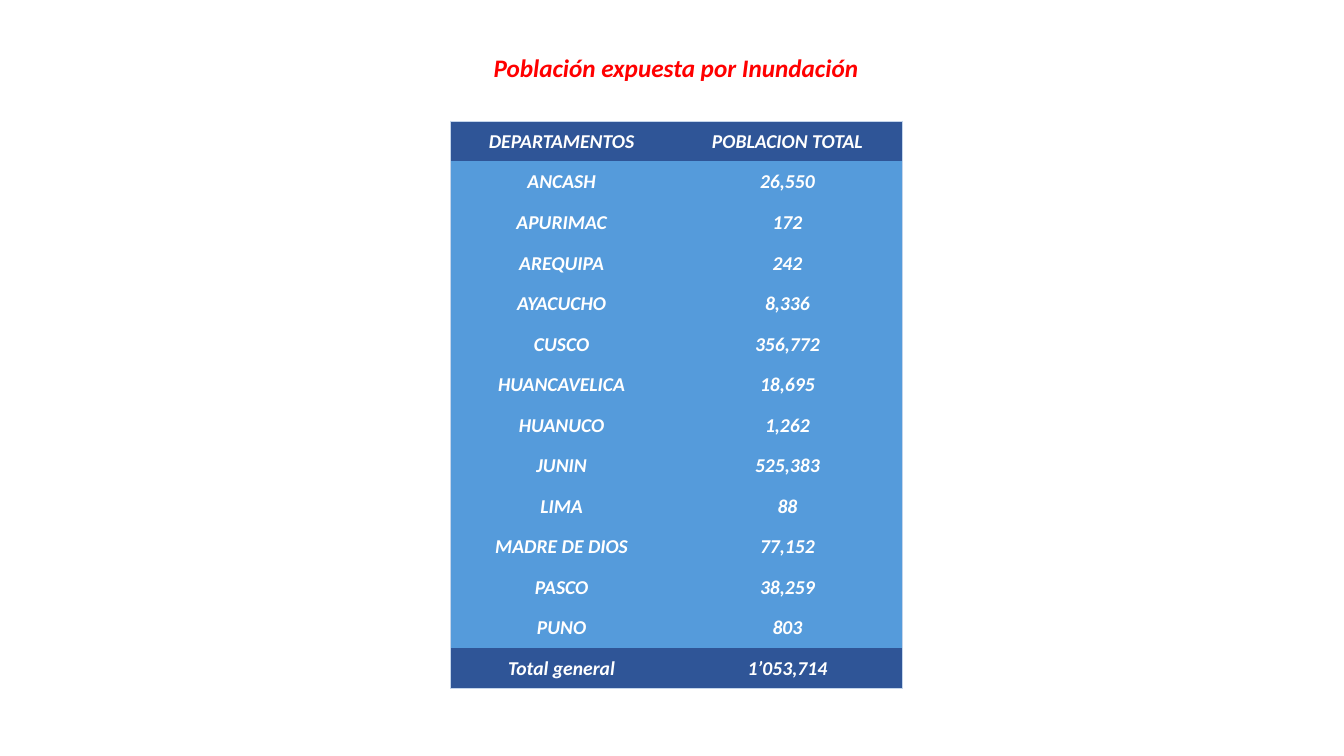
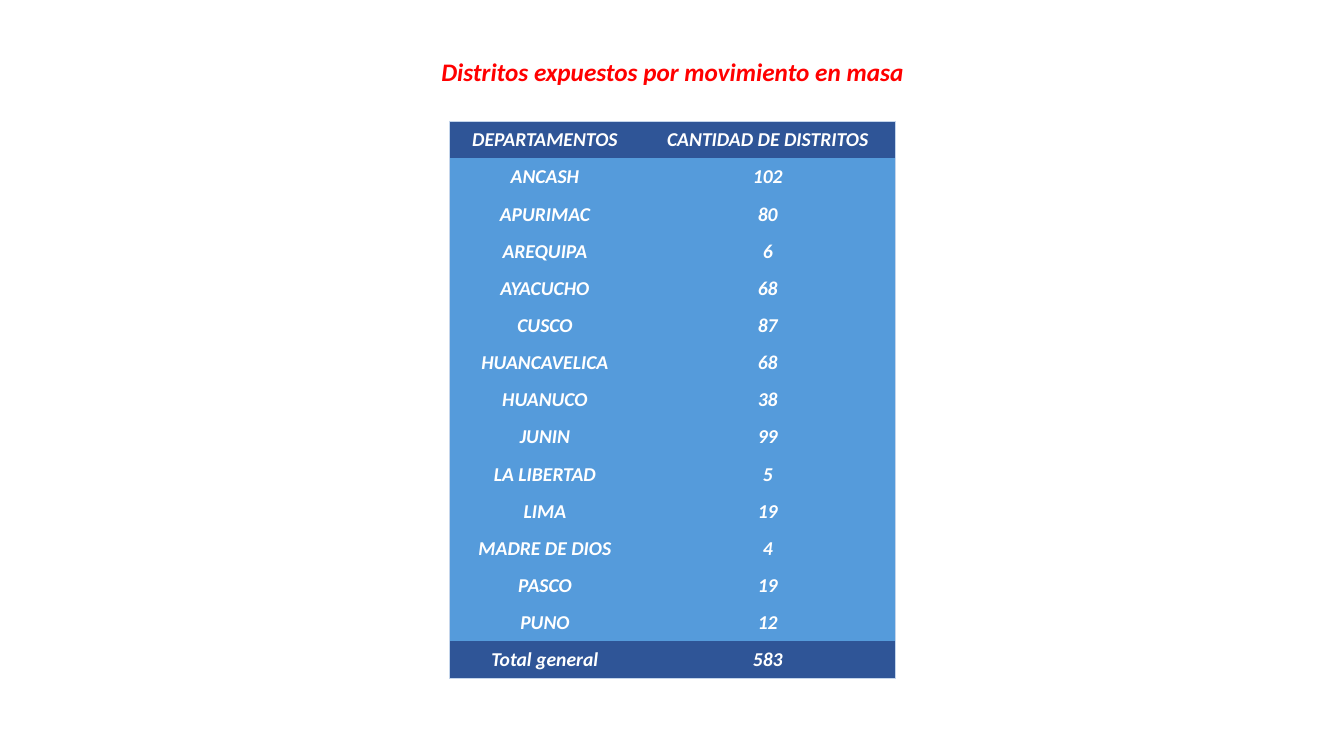
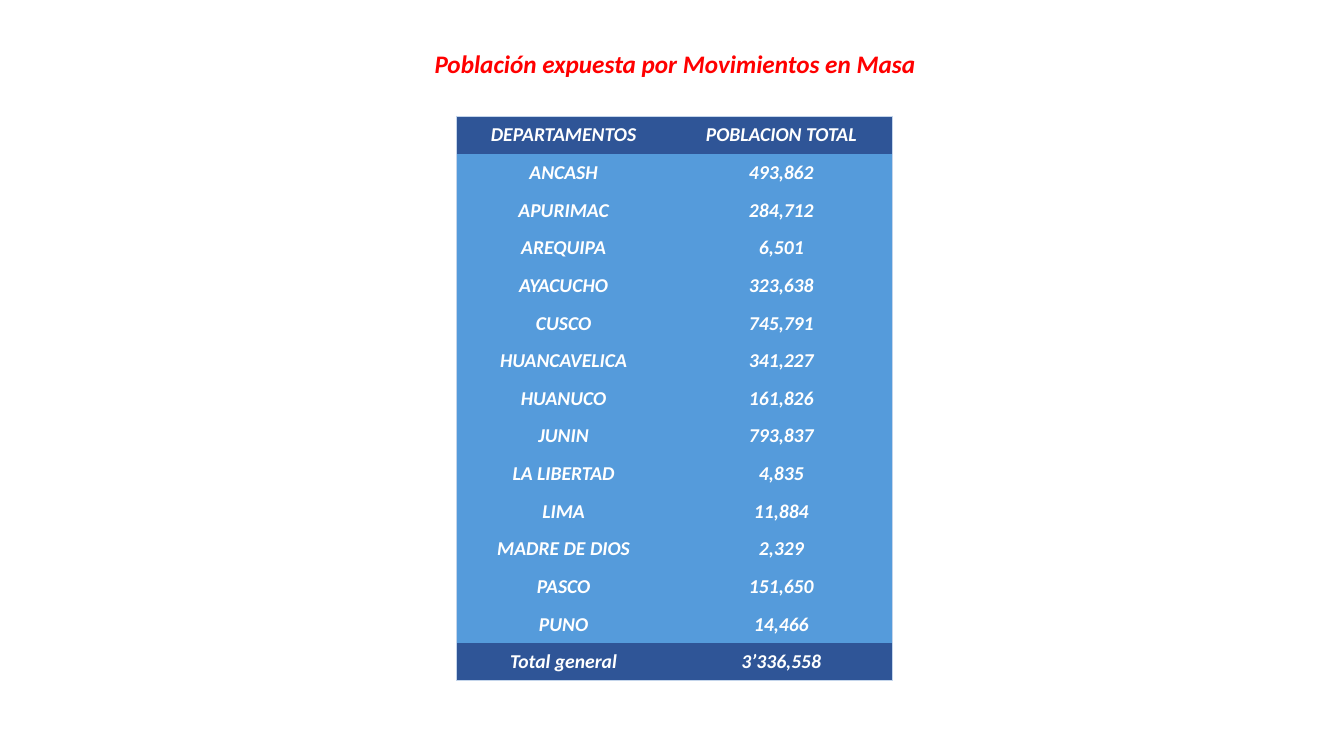
"""Tables of people and districts exposed to natural hazards."""
from dataclasses import dataclass

from lxml import etree
from pptx import Presentation
from pptx.dml.color import RGBColor
from pptx.enum.text import MSO_ANCHOR, MSO_AUTO_SIZE, PP_ALIGN
from pptx.oxml.ns import qn
from pptx.util import Inches, Pt

CENTER = PP_ALIGN.CENTER
TOP = MSO_ANCHOR.TOP
MIDDLE = MSO_ANCHOR.MIDDLE
GROW = MSO_AUTO_SIZE.SHAPE_TO_FIT_TEXT
TITLE_ONLY = 5


@dataclass(frozen=True)
class Theme:
    """Colours and type sizes shared by all slides."""

    font: str = "Calibri"
    title: str = "FF0000"
    text: str = "FFFFFF"
    band: str = "2F5597"
    body: str = "559BDB"
    edge: str = "C4D5EB"
    big: float = 18
    small: float = 14
    line: float = 0.5


@dataclass(frozen=True)
class Page:
    """One slide: a title above a table of departments."""

    title: str
    head: str
    names: list[str]
    counts: list[str]
    total: str
    box: tuple[float, float, float, float]
    left: float
    top: float
    cols: tuple[float, float]
    height: float

    def rows(self) -> list[tuple[str, str]]:
        """Return header, body and total rows."""
        body = list(zip(self.names, self.counts, strict=True))
        return [("DEPARTAMENTOS", self.head), *body, ("Total general", self.total)]


THEME = Theme()
PLACES = [
    "ANCASH", "APURIMAC", "AREQUIPA", "AYACUCHO", "CUSCO", "HUANCAVELICA", "HUANUCO",
    "JUNIN", "LA LIBERTAD", "LIMA", "MADRE DE DIOS", "PASCO", "PUNO",
]
PAGES = [
    Page(
        "Población expuesta por Inundación", "POBLACION TOTAL",
        [name for name in PLACES if name != "LA LIBERTAD"],
        ["26,550", "172", "242", "8,336", "356,772", "18,695", "1,262",
         "525,383", "88", "77,152", "38,259", "803"],
        "1’053,714", (4.78, 0.47, 3.85, 0.4), 4.47, 1.2, (2.2, 2.28), 5.63,
    ),
    Page(
        "Distritos expuestos por movimiento en masa", "CANTIDAD DE DISTRITOS",
        PLACES,
        ["102", "80", "6", "68", "87", "68", "38", "99", "5", "19", "4", "19", "12"],
        "583", (4.25, 0.51, 4.84, 0.4), 4.46, 1.2, (1.89, 2.53), 5.53,
    ),
    Page(
        "Población expuesta por Movimientos en Masa", "POBLACION TOTAL",
        PLACES,
        ["493,862", "284,712", "6,501", "323,638", "745,791", "341,227", "161,826",
         "793,837", "4,835", "11,884", "2,329", "151,650", "14,466"],
        "3’336,558", (4.18, 0.43, 5.03, 0.4), 4.53, 1.15, (2.12, 2.2), 5.6,
    ),
]


def write(frame, text: str, *, size: float, color: str) -> None:
    """Put centred bold italic text in a frame."""
    para = frame.paragraphs[0]
    para.alignment = CENTER
    run = para.add_run()
    run.text = text
    font = run.font
    font.name, font.size = THEME.font, Pt(size)
    font.bold = font.italic = True
    font.color.rgb = RGBColor.from_string(color)


def border(cell, sides: dict[str, bool]) -> None:
    """Draw the chosen sides of a cell and clear the others."""
    props = cell._tc.get_or_add_tcPr()
    for side, shown in sides.items():
        line = etree.SubElement(props, qn(f"a:ln{side}"), w=str(Pt(THEME.line)))
        if shown:
            fill = etree.SubElement(line, qn("a:solidFill"))
            etree.SubElement(fill, qn("a:srgbClr"), val=THEME.edge)
        else:
            etree.SubElement(line, qn("a:noFill"))


def add_title(slide, page: Page) -> None:
    """Place and fill the title."""
    shape = slide.shapes.title
    shape.left, shape.top, shape.width, shape.height = map(Inches, page.box)
    frame = shape.text_frame
    frame.word_wrap = False
    frame.auto_size = GROW
    frame.vertical_anchor = TOP
    write(frame, page.title, size=THEME.big, color=THEME.title)


def add_grid(slide, page: Page) -> None:
    """Draw the table with dark first and last rows."""
    rows = page.rows()
    last = len(rows) - 1
    table = slide.shapes.add_table(
        len(rows), len(page.cols), Inches(page.left), Inches(page.top),
        Inches(sum(page.cols)), Inches(page.height),
    ).table
    for col, width in zip(table.columns, page.cols):
        col.width = Inches(width)
    for r, row in enumerate(rows):
        for c, text in enumerate(row):
            cell = table.cell(r, c)
            cell.margin_left = cell.margin_right = cell.margin_top = Inches(0.01)
            cell.margin_bottom = Inches(0)
            cell.vertical_anchor = MIDDLE
            border(cell, {"L": c == 0, "R": c == len(row) - 1,
                          "T": r == 0, "B": r == last})
            cell.fill.solid()
            color = THEME.band if r in (0, last) else THEME.body
            cell.fill.fore_color.rgb = RGBColor.from_string(color)
            write(cell.text_frame, text, size=THEME.small, color=THEME.text)


def main() -> None:
    """Build and save the slides."""
    deck = Presentation()
    deck.slide_width, deck.slide_height = Inches(13.33), Inches(7.5)
    for page in PAGES:
        slide = deck.slides.add_slide(deck.slide_layouts[TITLE_ONLY])
        add_title(slide, page)
        add_grid(slide, page)
    deck.save("out.pptx")


if __name__ == "__main__":
    main()
